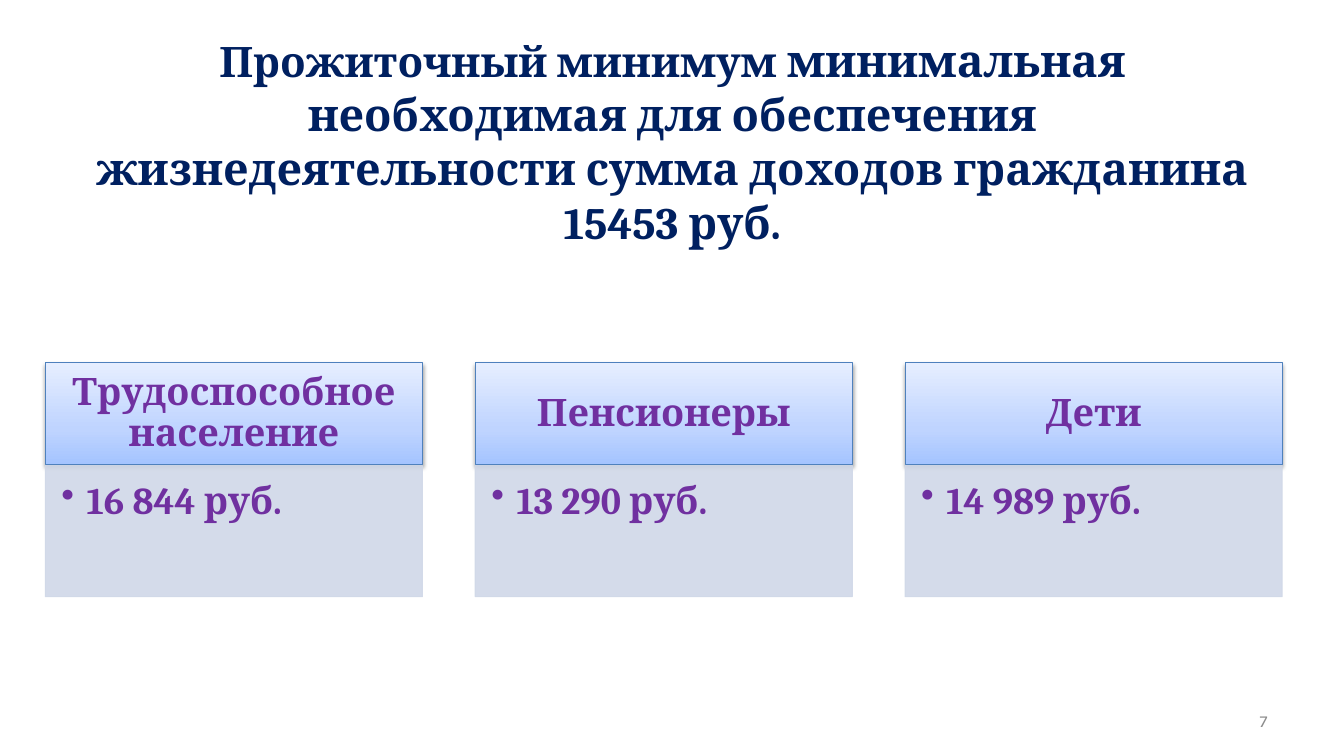
from lxml import etree
from pptx import Presentation
from pptx.dml.color import RGBColor
from pptx.enum.shapes import MSO_SHAPE as Shape
from pptx.enum.text import MSO_ANCHOR as Anchor, PP_ALIGN as Align
from pptx.oxml import parse_xml
from pptx.oxml.ns import nsdecls, qn
from pptx.util import Inches, Pt

SERIF, SANS = "Cambria", "Karla"
NAVY, PURPLE, GRAY = "002060", "7030A0", "8C8C8C"
HEADER_LINE, BODY_FILL = "4F81BD", "D0D8E8"
HEADER_STOPS = [(0, "A4C4FF"), (35, "BFD4FF"), (100, "E6EEFF")]

CARD_LEFT, CARD_WIDTH = 0.45, 3.74
CARD_PITCH = CARD_WIDTH * 1.14
HEADER_TOP, HEADER_HEIGHT = 3.6, 1.01
BODY_TOP, BODY_HEIGHT = 4.62, 1.3

CARDS = [
    ("Трудоспособное население", "16 844 руб."),
    ("Пенсионеры", "13 290 руб."),
    ("Дети", "14 989 руб."),
]


def rgb(color):
    return RGBColor.from_string(color)


def style(font, size, color, name=SERIF, bold=True):
    font.name, font.size, font.bold = name, Pt(size), bold
    font.color.rgb = rgb(color)


def set_frame(frame, anchor=Anchor.MIDDLE, insets=(0.1, 0.05, 0.1, 0.05)):
    frame.word_wrap = True
    frame.vertical_anchor = anchor
    (frame.margin_left, frame.margin_top,
     frame.margin_right, frame.margin_bottom) = map(Inches, insets)


def add_text(para, text, **text_format):
    """Add a run; a line feed in the text becomes a line break."""
    for index, line in enumerate(text.split("\n")):
        if index:
            para.add_line_break()
        span = para.add_run()
        span.text = line
        style(span.font, **text_format)


def add_text_box(page, left, top, width, height, align):
    box = page.shapes.add_textbox(*map(Inches, (left, top, width, height)))
    set_frame(box.text_frame)
    para = box.text_frame.paragraphs[0]
    para.alignment = align
    return para


def add_panel(page, left, top, height, line_color):
    panel = page.shapes.add_shape(
        Shape.RECTANGLE, *map(Inches, (left, top, CARD_WIDTH, height)))
    panel.shadow.inherit = False
    panel.line.color.rgb = rgb(line_color)
    panel.line.width = Pt(0.75)
    return panel


def set_gradient(panel, stops):
    """Run the colour stops from the bottom edge to the top edge."""
    panel.fill.gradient()
    panel.fill.gradient_angle = 90
    stop_list = panel.element.spPr.find(".//" + qn("a:gsLst"))
    for stop in list(stop_list):
        stop_list.remove(stop)
    for position, color in stops:
        stop_list.append(parse_xml(
            f'<a:gs {nsdecls("a")} pos="{position * 1000}">'
            f'<a:srgbClr val="{color}"/></a:gs>'))


def set_shadow(panel):
    effects = panel.element.spPr.find(qn("a:effectLst"))
    effects.append(parse_xml(
        f'<a:outerShdw {nsdecls("a")} blurRad="{Pt(3.1)}" dist="{Pt(1.6)}" '
        'dir="5400000" rotWithShape="0"><a:srgbClr val="000000">'
        '<a:alpha val="38000"/></a:srgbClr></a:outerShdw>'))


def set_opacity(panel, percent):
    """Apply the opacity to the fill and the line of the panel."""
    for color in panel.element.spPr.iter(qn("a:srgbClr")):
        etree.SubElement(color, qn("a:alpha")).set("val", str(percent * 1000))


def add_bullet(para, indent):
    props = para._p.get_or_add_pPr()
    props.set("marL", str(Inches(indent)))
    props.set("indent", str(-Inches(indent)))
    etree.SubElement(props, qn("a:buChar")).set("char", "•")


def add_header(page, left, text):
    panel = add_panel(page, left, HEADER_TOP, HEADER_HEIGHT, HEADER_LINE)
    set_gradient(panel, HEADER_STOPS)
    set_shadow(panel)
    set_frame(panel.text_frame, insets=(0.21, 0.12, 0.21, 0.12))
    para = panel.text_frame.paragraphs[0]
    para.alignment, para.line_spacing = Align.CENTER, 0.9
    add_text(para, text, size=27, color=PURPLE)


def add_body(page, left, text):
    panel = add_panel(page, left, BODY_TOP, BODY_HEIGHT, BODY_FILL)
    panel.fill.solid()
    panel.fill.fore_color.rgb = rgb(BODY_FILL)
    set_opacity(panel, 90)
    set_frame(panel.text_frame, Anchor.TOP, (0.16, 0.16, 0.21, 0.24))
    para = panel.text_frame.paragraphs[0]
    para.alignment, para.line_spacing = Align.LEFT, 0.9
    add_bullet(para, 0.25)
    add_text(para, text, size=27, color=PURPLE)


def add_page_number(page, number):
    para = add_text_box(page, 9.56, 6.95, 3.11, 0.4, Align.RIGHT)
    para._p.append(parse_xml(
        f'<a:fld {nsdecls("a")} id="{{B6F15528-21DE-4FAA-801E-634DDDAF4B2B}}" '
        f'type="slidenum"><a:rPr lang="ru-RU" sz="1200"><a:solidFill>'
        f'<a:srgbClr val="{GRAY}"/></a:solidFill><a:latin typeface="{SANS}"/>'
        f'</a:rPr><a:t>{number}</a:t></a:fld>'))


def main():
    deck = Presentation()
    deck.slide_width, deck.slide_height = Inches(13.33), Inches(7.5)
    # The deck opens at page 7
    deck.element.set("firstSlideNum", "7")
    page = deck.slides.add_slide(deck.slide_layouts[6])

    # Title
    title = add_text_box(page, 0.67, 0.3, 12, 2.19, Align.CENTER)
    add_text(title, "Прожиточный минимум ", size=30, color=NAVY)
    add_text(title, "минимальная необходимая для обеспечения жизнедеятельности "
             "сумма доходов гражданина\n15453 руб.", size=32, color=NAVY)

    # Cards: group of people above, amount below
    for index, (group, amount) in enumerate(CARDS):
        left = CARD_LEFT + index * CARD_PITCH
        add_header(page, left, group)
        add_body(page, left, amount)

    # Footer
    add_page_number(page, 7)
    deck.save("out.pptx")


if __name__ == "__main__":
    main()
